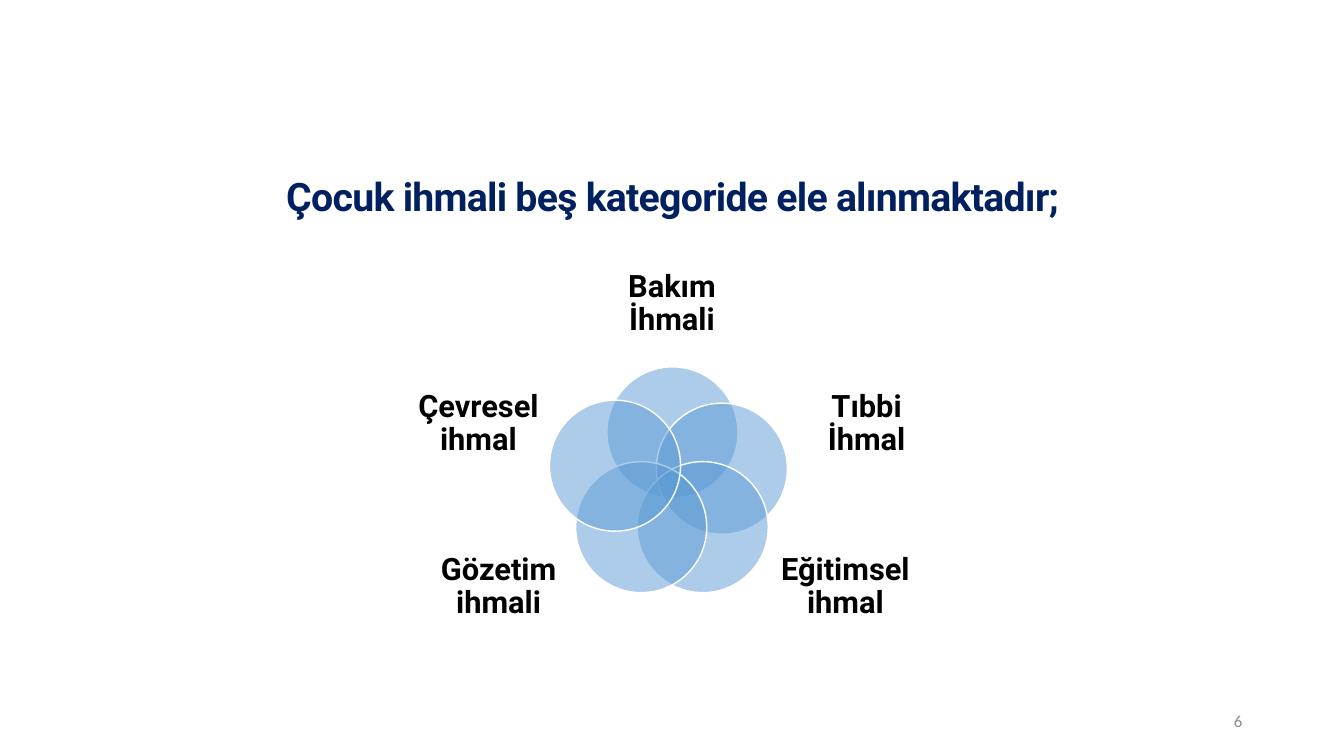
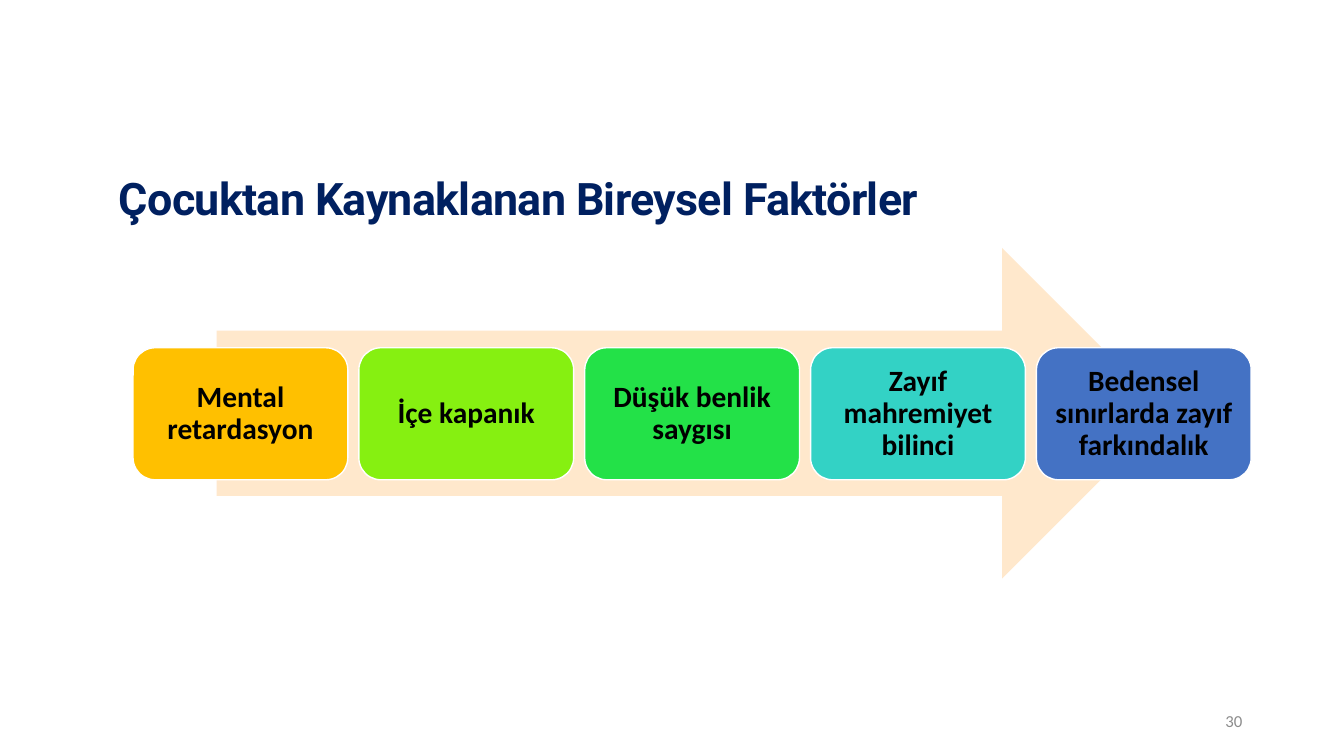
from dataclasses import dataclass

from lxml import etree
from pptx import Presentation
from pptx.dml.color import RGBColor
from pptx.enum.shapes import MSO_SHAPE
from pptx.enum.text import MSO_ANCHOR, PP_ALIGN
from pptx.oxml.ns import qn
from pptx.shapes.autoshape import Shape
from pptx.slide import Slide
from pptx.util import Inches, Pt

OVAL, ROUNDED, ARROW = MSO_SHAPE.OVAL, MSO_SHAPE.ROUNDED_RECTANGLE, MSO_SHAPE.RIGHT_ARROW
LEFT, CENTER, RIGHT = PP_ALIGN.LEFT, PP_ALIGN.CENTER, PP_ALIGN.RIGHT
MIDDLE = MSO_ANCHOR.MIDDLE

NAVY = RGBColor(0x00, 0x20, 0x60)
BLACK = RGBColor(0x00, 0x00, 0x00)
WHITE = RGBColor(0xFF, 0xFF, 0xFF)
GRAY = RGBColor(0x8C, 0x8C, 0x8C)
PETAL_BLUE = RGBColor(0x5B, 0x9B, 0xD5)
PEACH = RGBColor(0xFF, 0xE8, 0xCC)
AMBER = RGBColor(0xFF, 0xC0, 0x00)
LIME = RGBColor(0x86, 0xF0, 0x11)
GREEN = RGBColor(0x23, 0xE1, 0x48)
TURQUOISE = RGBColor(0x33, 0xD2, 0xC5)
BLUE = RGBColor(0x44, 0x72, 0xC4)

HEADING_FONT, BODY_FONT = "Roboto", "Calibri"
PETAL_SIZE = 1.3
FACTOR_LEFT, FACTOR_TOP, FACTOR_PITCH = 1.32, 3.45, 2.24
FACTOR_WIDTH, FACTOR_HEIGHT = 2.13, 1.31


@dataclass(frozen=True)
class Box:
    left: float
    top: float
    width: float
    height: float

    def emu(self) -> tuple[int, int, int, int]:
        return Inches(self.left), Inches(self.top), Inches(self.width), Inches(self.height)


@dataclass(frozen=True)
class TextStyle:
    size: float
    font: str
    color: RGBColor
    bold: bool = True
    align: PP_ALIGN = CENTER
    line_spacing: float = 0.9
    tracking: float = 0
    inset_x: float = 0.1
    inset_y: float = 0.05


@dataclass(frozen=True)
class Category:
    text: str
    petal_left: float
    petal_top: float
    label: Box


@dataclass(frozen=True)
class Factor:
    text: str
    color: RGBColor


LABEL_STYLE = TextStyle(22, HEADING_FONT, BLACK, inset_x=0, inset_y=0)
FACTOR_STYLE = TextStyle(21, BODY_FONT, BLACK, inset_x=0.09, inset_y=0.09)
NUMBER_STYLE = TextStyle(12, BODY_FONT, GRAY, bold=False, align=RIGHT, line_spacing=1)

CATEGORIES = (
    Category("Bakım İhmali", 6.02, 3.64, Box(5.91, 2.58, 1.51, 0.87)),
    Category("Tıbbi İhmal", 6.51, 4, Box(7.92, 3.73, 1.35, 0.95)),
    Category("Eğitimsel ihmal", 6.32, 4.58, Box(7.71, 5.35, 1.35, 0.95)),
    Category("Gözetim ihmali", 5.71, 4.58, Box(4.27, 5.35, 1.35, 0.95)),
    Category("Çevresel ihmal", 5.45, 3.97, Box(4.07, 3.73, 1.35, 0.95)),
)
FACTORS = (
    Factor("Mental retardasyon", AMBER),
    Factor("İçe kapanık", LIME),
    Factor("Düşük benlik saygısı", GREEN),
    Factor("Zayıf mahremiyet bilinci", TURQUOISE),
    Factor("Bedensel sınırlarda zayıf farkındalık", BLUE),
)


def write(shape: Shape, text: str, style: TextStyle) -> None:
    frame = shape.text_frame
    frame.text = text
    frame.word_wrap = True
    frame.vertical_anchor = MIDDLE
    frame.margin_left = frame.margin_right = Inches(style.inset_x)
    frame.margin_top = frame.margin_bottom = Inches(style.inset_y)
    paragraph = frame.paragraphs[0]
    paragraph.alignment = style.align
    paragraph.line_spacing = style.line_spacing
    run = paragraph.runs[0]
    run.font.size = Pt(style.size)
    run.font.name = style.font
    run.font.bold = style.bold
    run.font.color.rgb = style.color
    if style.tracking:
        run.font._element.set("spc", str(round(style.tracking * 100)))


def add_text(slide: Slide, box: Box, text: str, style: TextStyle) -> None:
    write(slide.shapes.add_textbox(*box.emu()), text, style)


def add_filled(slide: Slide, kind: MSO_SHAPE, box: Box, color: RGBColor,
               outlined: bool = True) -> Shape:
    shape = slide.shapes.add_shape(kind, *box.emu())
    shape.shadow.inherit = False
    shape.fill.solid()
    shape.fill.fore_color.rgb = color
    if outlined:
        shape.line.color.rgb = WHITE
        shape.line.width = Pt(1)
    else:
        shape.line.fill.background()
    return shape


def set_opacity(shape: Shape, percent: int) -> None:
    color = shape._element.spPr.find(qn("a:solidFill")).find(qn("a:srgbClr"))
    etree.SubElement(color, qn("a:alpha")).set("val", str(percent * 1000))


def add_titled_slide(prs: Presentation, title: str, box: Box, size: float,
                     align: PP_ALIGN, number: int) -> Slide:
    """Add a blank slide with the shared title style and page number."""
    slide = prs.slides.add_slide(prs.slide_layouts[6])
    add_text(slide, box, title,
             TextStyle(size, HEADING_FONT, NAVY, align=align, tracking=-0.5))
    add_text(slide, Box(9.42, 6.95, 3, 0.4), str(number), NUMBER_STYLE)
    return slide


def build_categories(prs: Presentation) -> None:
    slide = add_titled_slide(prs, "Çocuk ihmali beş kategoride ele alınmaktadır;",
                             Box(1.67, 1.55, 10, 0.84), 28, CENTER, 6)
    for category in CATEGORIES:
        petal = Box(category.petal_left, category.petal_top, PETAL_SIZE, PETAL_SIZE)
        set_opacity(add_filled(slide, OVAL, petal, PETAL_BLUE), 50)
        add_text(slide, category.label, category.text, LABEL_STYLE)


def build_factors(prs: Presentation) -> None:
    slide = add_titled_slide(prs, "Çocuktan Kaynaklanan Bireysel Faktörler",
                             Box(1.08, 1.34, 8.66, 1.3), 32, LEFT, 30)
    add_filled(slide, ARROW, Box(2.15, 2.46, 9.43, 3.28), PEACH, outlined=False)
    for index, factor in enumerate(FACTORS):
        box = Box(FACTOR_LEFT + index * FACTOR_PITCH, FACTOR_TOP, FACTOR_WIDTH, FACTOR_HEIGHT)
        write(add_filled(slide, ROUNDED, box, factor.color), factor.text, FACTOR_STYLE)


def main() -> None:
    prs = Presentation()
    prs.slide_width, prs.slide_height = Inches(13.33), Inches(7.5)
    build_categories(prs)
    build_factors(prs)
    prs.save("out.pptx")


if __name__ == "__main__":
    main()
